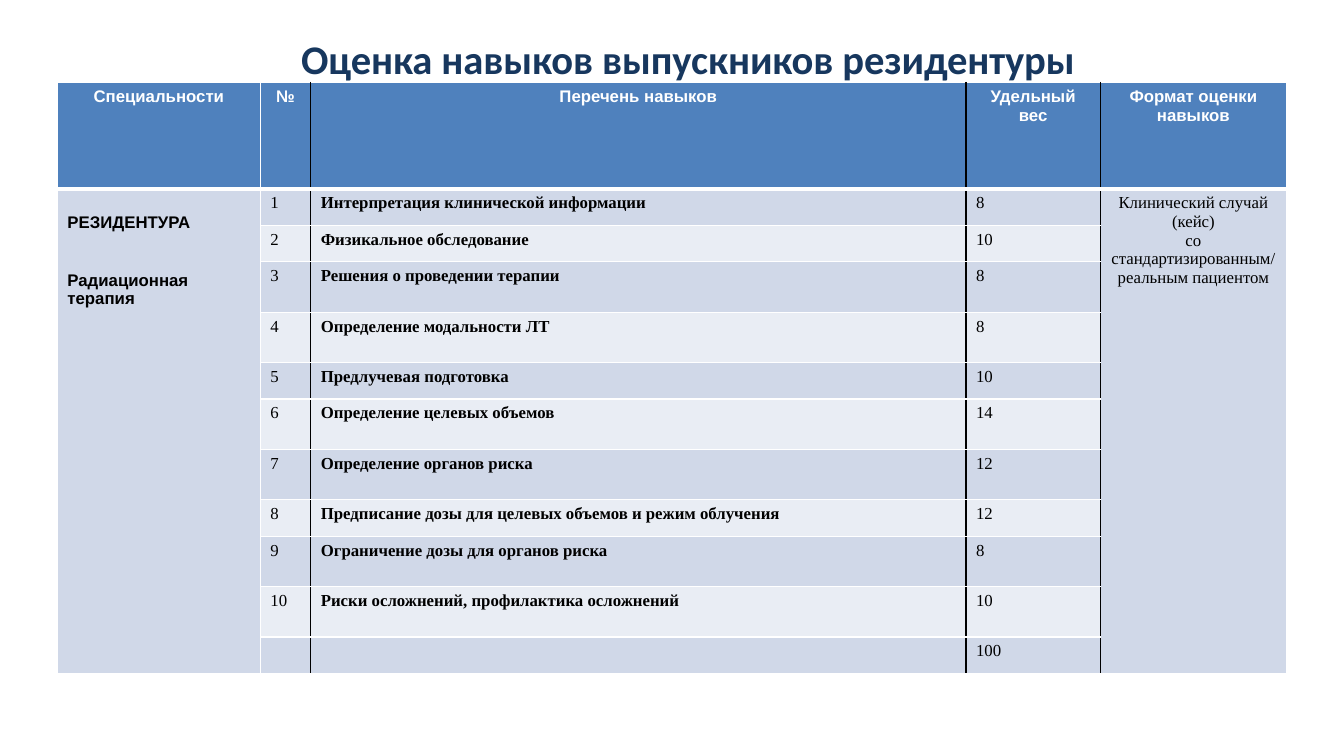
from pptx import Presentation
from pptx.dml.color import RGBColor as Color
from pptx.enum.text import MSO_ANCHOR as Anchor, PP_ALIGN as Align
from pptx.oxml.ns import qn
from pptx.util import Pt
from lxml.etree import SubElement as Sub

BLUE, NAVY, DARK, PALE = "4F81BD", "17375E", "D0D8E8", "E9EDF4"
WHITE, BLACK = "FFFFFF", "000000"
SERIF, SANS = "Times New Roman", "Arial"


def style(para, face, size, tint, bold, align):
    para.alignment = align
    for run in para.runs:
        font = run.font
        font.name, font.size, font.bold = face, Pt(size), bold
        font.color.rgb = Color.from_string(tint)
    if not para.runs:
        Sub(para._p, qn("a:endParaRPr"), sz=str(size * 100))


def edge(cell, side, tint, width):
    line = Sub(cell._tc.get_or_add_tcPr(), qn("a:ln" + side), w=str(Pt(width)))
    Sub(Sub(line, qn("a:solidFill")), qn("a:srgbClr"), val=tint)


deck = Presentation()
deck.slide_width, deck.slide_height = Pt(960), Pt(540)
slide = deck.slides.add_slide(deck.slide_layouts[5])

# Title
title = slide.shapes.title
title.left, title.top, title.width, title.height = Pt(41), Pt(22.5), Pt(901), Pt(36.5)
frame = title.text_frame
frame.text = "Оценка навыков выпускников резидентуры"
frame.margin_left = frame.margin_right = frame.margin_bottom = 0
frame.margin_top = Pt(1.5)
frame.vertical_anchor = Anchor.TOP
style(frame.paragraphs[0], "Calibri", 29, NAVY, True, Align.CENTER)
frame.paragraphs[0].runs[0].font._element.set("spc", "-10")

# Table content
heads = ["Специальности", "№", "Перечень навыков", "Удельный вес", "Формат оценки навыков"]
skills = [
    ("Интерпретация клинической информации", 8),
    ("Физикальное обследование", 10),
    ("Решения о проведении терапии", 8),
    ("Определение модальности ЛТ", 8),
    ("Предлучевая подготовка", 10),
    ("Определение целевых объемов", 14),
    ("Определение органов риска", 12),
    ("Предписание дозы для целевых объемов и режим облучения", 12),
    ("Ограничение дозы для органов риска", 8),
    ("Риски осложнений, профилактика осложнений", 10),
]
rows = [heads]
for num, (skill, weight) in enumerate(skills, 1):
    rows.append(["", str(num), skill, str(weight), ""])
rows.append(["", "", "", str(sum(weight for _, weight in skills)), ""])
rows[1][0] = "РЕЗИДЕНТУРА\nРадиационная терапия"
rows[1][4] = "Клинический случай (кейс)\nсо стандартизированным/\nреальным пациентом"

# Table grid
widths = [145, 36, 468, 96, 133]
tall = {3, 4, 6, 7, 9, 10}
highs = [76] + [36 if row in tall else 26 for row in range(1, len(rows))]
table = slide.shapes.add_table(
    len(rows), len(widths), Pt(41), Pt(59), Pt(sum(widths)), Pt(sum(highs))).table
for col, width in zip(table.columns, widths):
    col.width = Pt(width)
for row, high in zip(table.rows, highs):
    row.height = Pt(high)
for col in (0, 4):
    table.cell(1, col).merge(table.cell(len(rows) - 1, col))

# Cells: text, borders, fill
for r, row in enumerate(rows):
    for c, text in enumerate(row):
        cell = table.cell(r, c)
        cell.text_frame.text = text
        head = r == 0
        face = SANS if head or c == 0 else SERIF
        bold = head or c in (0, 2)
        align = Align.CENTER if head or c == 4 else Align.LEFT
        for para in cell.text_frame.paragraphs:
            style(para, face, 12, WHITE if head else BLACK, bold, align)
        edge(cell, "L", BLACK if c > 1 else WHITE, 1)
        edge(cell, "R", BLACK if 0 < c < 4 else WHITE, 1)
        edge(cell, "T", WHITE, 3 if r == 1 else 1)
        edge(cell, "B", WHITE, 3 if head else 1)
        cell.fill.solid()
        shade = BLUE if head else DARK if r % 2 or c in (0, 4) else PALE
        cell.fill.fore_color.rgb = Color.from_string(shade)

# Spacing in the specialty cell
field = table.cell(1, 0)
field.margin_top = Pt(17.4)
field.text_frame.paragraphs[1].space_before = Pt(27.6)

deck.save("out.pptx")
